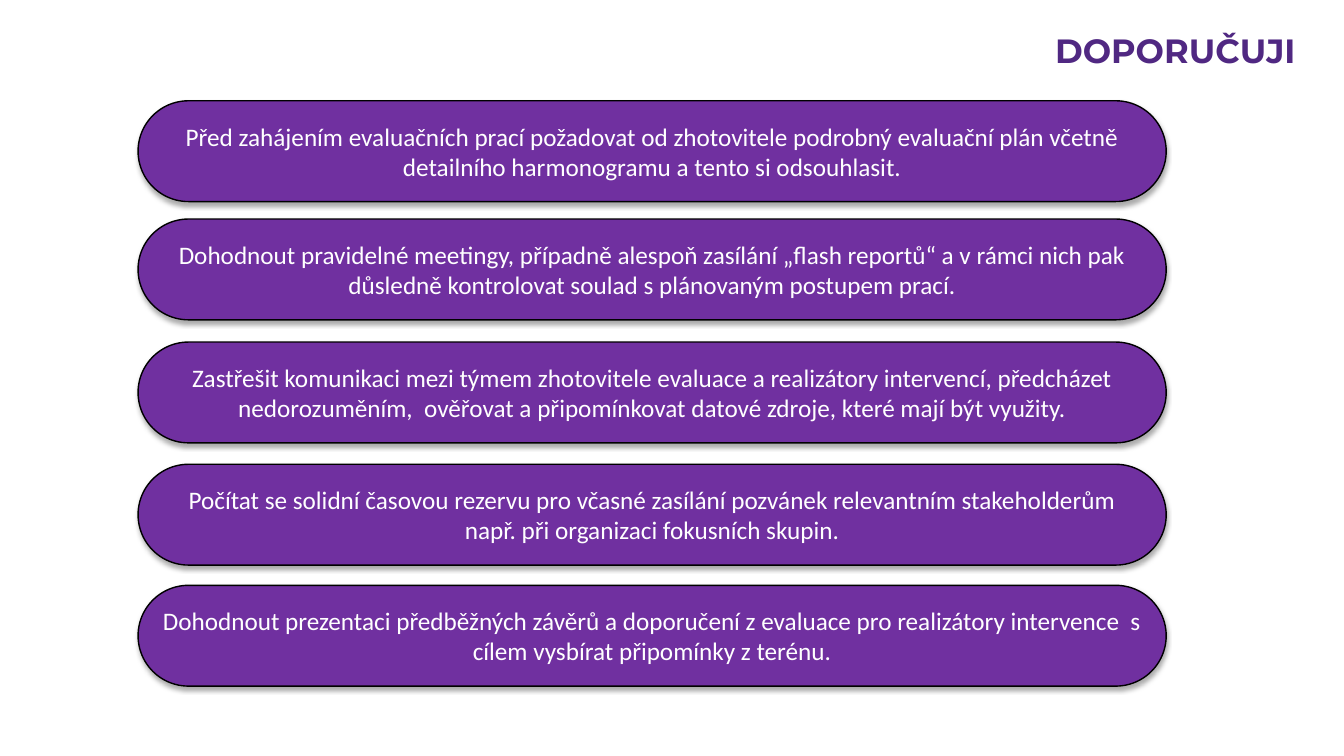
from dataclasses import dataclass

from pptx import Presentation
from pptx.dml.color import RGBColor
from pptx.enum.shapes import MSO_SHAPE as Preset
from pptx.enum.text import MSO_ANCHOR as Anchor, MSO_AUTO_SIZE as AutoSize, PP_ALIGN as Align
from pptx.oxml import parse_xml
from pptx.oxml.ns import nsdecls
from pptx.shapes.autoshape import Shape
from pptx.slide import Slide
from pptx.util import Cm, Pt

COLORS = {
    "title": "502882",
    "pill": "7030A0",
    "outline": "000000",
    "shadow": "000000",
    "text": "FFFFFF",
}
PILL_LEFT, PILL_WIDTH, PILL_HEIGHT = Cm(3.48), Cm(25.91), Cm(2.54)


@dataclass(frozen=True)
class Advice:
    top: float
    text: str


ADVICE = [
    Advice(2.54, "Před zahájením evaluačních prací požadovat od zhotovitele podrobný "
                 "evaluační plán včetně detailního harmonogramu a tento si odsouhlasit."),
    Advice(5.52, "Dohodnout pravidelné meetingy, případně alespoň zasílání „flash reportů“ "
                 "a v rámci nich pak důsledně kontrolovat soulad s plánovaným postupem prací."),
    Advice(8.62, "Zastřešit komunikaci mezi týmem zhotovitele evaluace a realizátory "
                 "intervencí, předcházet nedorozuměním,  ověřovat a připomínkovat datové "
                 "zdroje, které mají být využity."),
    Advice(11.7, "Počítat se solidní časovou rezervu pro včasné zasílání pozvánek "
                 "relevantním stakeholderům např. při organizaci fokusních skupin."),
    Advice(14.75, "Dohodnout prezentaci předběžných závěrů a doporučení z evaluace pro "
                  "realizátory intervence  s cílem vysbírat připomínky z terénu."),
]


def color(name: str) -> RGBColor:
    return RGBColor.from_string(COLORS[name])


def write_text(box: Shape, text: str, align: Align, font: str, size: int,
               color_name: str, bold: bool = False) -> None:
    frame = box.text_frame
    frame.word_wrap = True
    frame.auto_size = AutoSize.NONE
    frame.vertical_anchor = Anchor.MIDDLE
    para = frame.paragraphs[0]
    para.text = text
    para.alignment = align
    para.font.name = font
    para.font.size = Pt(size)
    para.font.bold = bold
    para.font.color.rgb = color(color_name)


def add_soft_shadow(box: Shape) -> None:
    box._element.spPr.append(parse_xml(
        f'<a:effectLst {nsdecls("a")}>'
        f'<a:outerShdw blurRad="{Pt(3.5)}" dist="{Pt(2.2)}" dir="5400000" rotWithShape="0">'
        f'<a:srgbClr val="{COLORS["shadow"]}"><a:alpha val="32000"/></a:srgbClr>'
        '</a:outerShdw></a:effectLst>'))


def add_title(page: Slide, text: str) -> None:
    title = page.shapes.title
    title.left, title.top, title.width, title.height = Cm(8.74), Cm(0.91), Cm(24.16), Cm(0.84)
    write_text(title, text, Align.RIGHT, "Montserrat", 24, "title", bold=True)
    title.text_frame.paragraphs[0].line_spacing = 0.9


def add_pill(page: Slide, advice: Advice) -> None:
    pill = page.shapes.add_shape(
        Preset.ROUNDED_RECTANGLE, PILL_LEFT, Cm(advice.top), PILL_WIDTH, PILL_HEIGHT)
    pill.adjustments[0] = 0.5
    pill.fill.solid()
    pill.fill.fore_color.rgb = color("pill")
    pill.line.color.rgb = color("outline")
    pill.line.width = Pt(1)
    add_soft_shadow(pill)
    write_text(pill, advice.text, Align.CENTER, "Calibri", 18, "text")


def main() -> None:
    deck = Presentation()
    deck.slide_width, deck.slide_height = Cm(33.87), Cm(19.05)
    page = deck.slides.add_slide(deck.slide_layouts.get_by_name("Title Only"))
    add_title(page, "DOPORUČUJI")
    for advice in ADVICE:
        add_pill(page, advice)
    deck.save("out.pptx")


if __name__ == "__main__":
    main()
